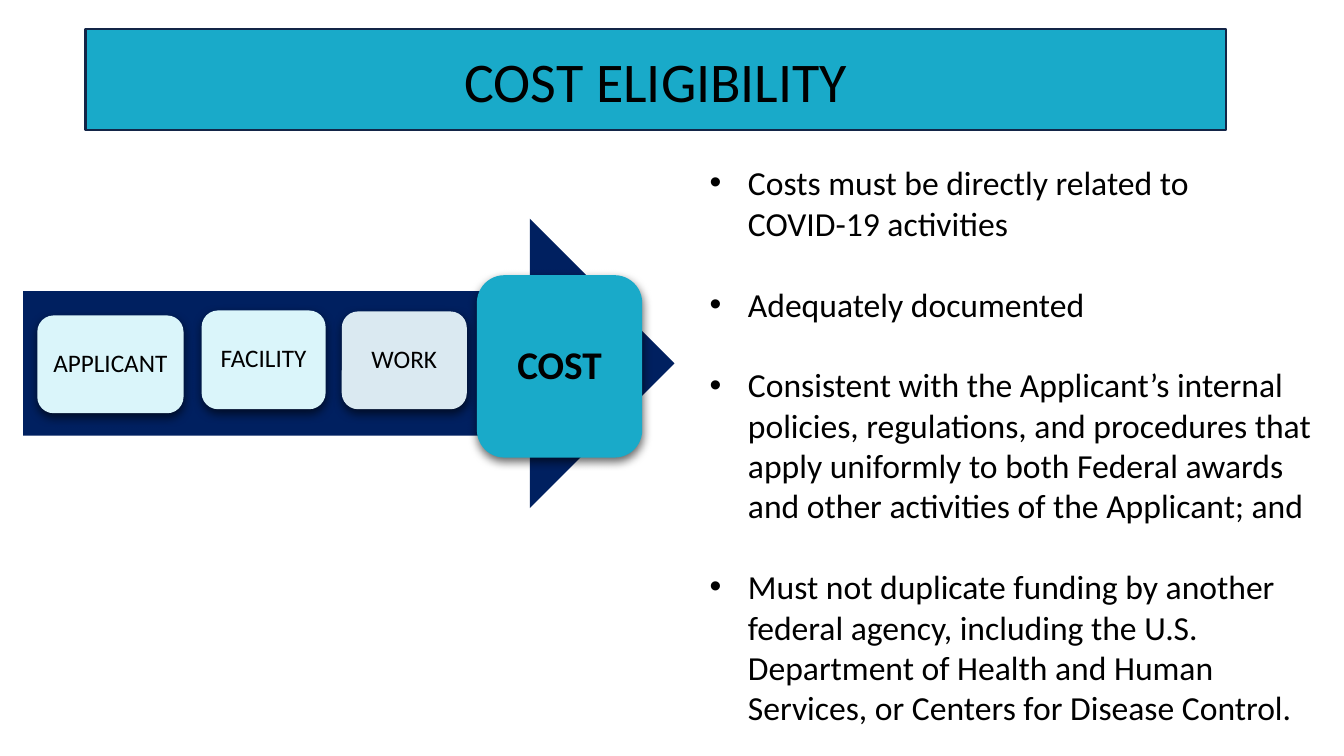
import pptx
import pptx.util
import pptx.dml.color
import pptx.enum.shapes
import pptx.enum.text
import pptx.oxml
import pptx.oxml.ns
import lxml.etree

Inches = pptx.util.Inches
Pt = pptx.util.Pt
MSO = pptx.enum.shapes.MSO_SHAPE


def rgb(value):
    return pptx.dml.color.RGBColor.from_string(value)


def add_box(kind, box, fill, text="", size=18, bold=False, inset=0.1):
    sp = slide.shapes.add_shape(kind, *[Inches(v) for v in box])
    sp.shadow.inherit = False
    sp.fill.solid()
    sp.fill.fore_color.rgb = rgb(fill)
    sp.line.fill.background()
    tf = sp.text_frame
    tf.word_wrap = True
    tf.vertical_anchor = pptx.enum.text.MSO_ANCHOR.MIDDLE
    tf.margin_left = tf.margin_right = Inches(inset)
    tf.margin_top = tf.margin_bottom = Inches(inset)
    p = tf.paragraphs[0]
    p.text = text
    p.alignment = pptx.enum.text.PP_ALIGN.CENTER
    p.font.name = "Calibri"
    p.font.size = Pt(size)
    p.font.bold = bold
    p.font.color.rgb = rgb("000000")
    return sp


prs = pptx.Presentation()
prs.slide_width = Inches(13.33)
prs.slide_height = Inches(7.5)
slide = prs.slides.add_slide(prs.slide_layouts[6])

requirements = [
    "Costs must be directly related to COVID-19 activities",
    "Adequately documented",
    "Consistent with the Applicant’s internal policies, regulations, and procedures that "
    "apply uniformly to both Federal awards and other activities of the Applicant; and",
    "Must not duplicate funding by another federal agency, including the U.S. Department "
    "of Health and Human Services, or Centers for Disease Control.",
]
tb = slide.shapes.add_textbox(Inches(6.94), Inches(1.56), Inches(6.24), Inches(5.76))
tf = tb.text_frame
tf.word_wrap = True
for i, text in enumerate(requirements):
    p = tf.paragraphs[0] if i == 0 else tf.add_paragraph()
    p.text = text
    p.font.name = "Calibri"
    p.font.size = Pt(24)
    p.font.color.rgb = rgb("000000")
    if i:
        p.space_before = Pt(29)
    pPr = p._p.get_or_add_pPr()
    pPr.set("marL", str(Inches(0.38)))
    pPr.set("indent", str(Inches(-0.38)))
    for tag, key, value in [("a:buFont", "typeface", "Arial"), ("a:buChar", "char", "•")]:
        bullet = lxml.etree.Element(pptx.oxml.ns.qn(tag))
        bullet.set(key, value)
        pPr.insert_element_before(bullet, "a:tabLst", "a:defRPr", "a:extLst")

add_box(MSO.RIGHT_ARROW, (0.23, 2.17, 6.46, 2.87), "002060")

steps = [
    ("APPLICANT", (0.37, 3.13, 1.45, 0.97), "DAF5FA", 18, False, 0.07),
    ("FACILITY", (2, 3.08, 1.23, 0.98), "DAF5FA", 18, False, 0.07),
    ("COST", (4.73, 2.73, 1.64, 1.81), "19AAC9", 28, True, 0.12),
    ("WORK", (3.39, 3.09, 1.24, 0.97), "DAE9F1", 18, False, 0.07),
]
for text, box, fill, size, bold, inset in steps:
    sp = add_box(MSO.ROUNDED_RECTANGLE, box, fill, text, size, bold, inset)
    p = sp.text_frame.paragraphs[0]
    p.line_spacing = 0.9
    p.space_after = Pt(size * 0.35)
    effects = sp._element.spPr.find(pptx.oxml.ns.qn("a:effectLst"))
    effects.append(pptx.oxml.parse_xml(
        f'<a:outerShdw {pptx.oxml.ns.nsdecls("a")} blurRad="{Pt(7)}" dist="{Pt(3)}" '
        'dir="5040000" algn="ctr" rotWithShape="0">'
        '<a:srgbClr val="000000"><a:alpha val="60000"/></a:srgbClr></a:outerShdw>'))

title = add_box(MSO.RECTANGLE, (0.85, 0.29, 11.31, 1), "19AAC9", "COST ELIGIBILITY", 40)
title.line.color.rgb = rgb("132547")
title.line.width = Pt(1.75)

prs.save("out.pptx")
